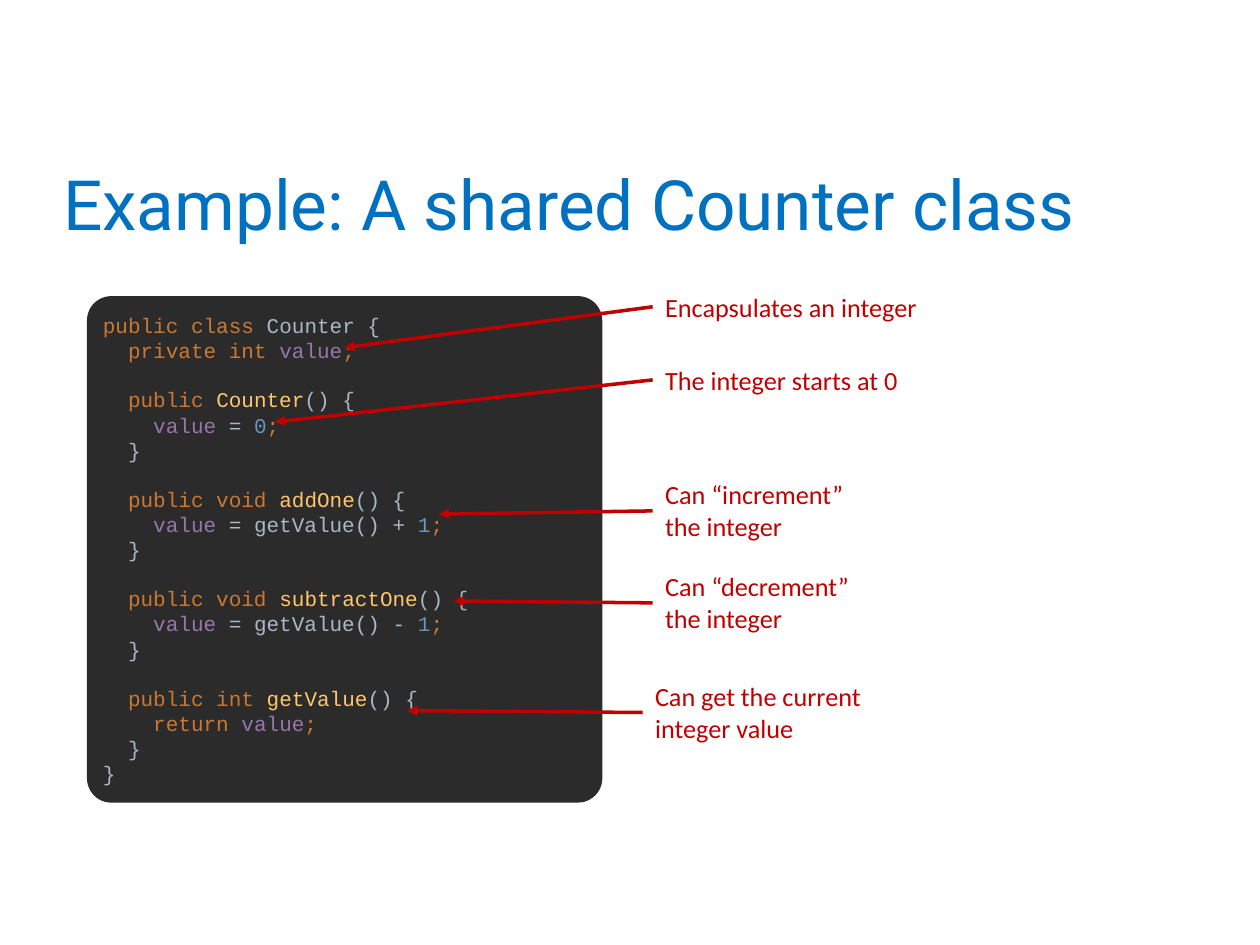
from dataclasses import dataclass

from lxml import etree
from pptx import Presentation
from pptx.dml.color import RGBColor
from pptx.enum.shapes import MSO_CONNECTOR, MSO_SHAPE
from pptx.enum.text import MSO_ANCHOR, PP_ALIGN
from pptx.oxml.ns import qn
from pptx.util import Inches, Pt

STRAIGHT = MSO_CONNECTOR.STRAIGHT
ROUNDED = MSO_SHAPE.ROUNDED_RECTANGLE
MIDDLE = MSO_ANCHOR.MIDDLE
TOP = MSO_ANCHOR.TOP
LEFT = PP_ALIGN.LEFT


@dataclass(frozen=True)
class Theme:
    title_font: str = "Roboto"
    code_font: str = "Courier New"
    note_font: str = "Calibri"
    title_size: float = 39.6
    code_size: float = 12
    note_size: float = 15
    blank_line: float = 13.6
    arrow_width: float = 2
    title: str = "0070C0"
    note: str = "C00000"
    panel: str = "2B2B2B"
    keyword: str = "CC7832"
    plain: str = "A9B7C6"
    field: str = "9876AA"
    method: str = "FFC66D"
    number: str = "6897BB"


def header(modifiers, name):
    return [("keyword", f"  {modifiers} "), ("method", name), ("plain", "() {")]


def assignment(expression, number):
    return [("field", "    value "), ("plain", f"= {expression}"),
            ("number", number), ("keyword", ";")]


METHOD_END = [("plain", "  }")]

CODE_BLOCKS = [
    [[("keyword", "public class "), ("plain", "Counter {")],
     [("keyword", "  private int "), ("field", "value"), ("keyword", ";")]],
    [header("public", "Counter"), assignment("", "0"), METHOD_END],
    [header("public void", "addOne"), assignment("getValue() + ", "1"), METHOD_END],
    [header("public void", "subtractOne"), assignment("getValue() - ", "1"), METHOD_END],
    [header("public int", "getValue"),
     [("keyword", "    return "), ("field", "value"), ("keyword", ";")],
     METHOD_END, [("plain", "}")]],
]

ONE_LINE, TWO_LINES = 0.35, 0.61
NOTES = [
    ("Encapsulates an integer", (5.18, 2.26, 2.55, ONE_LINE), (2.73, 2.76)),
    ("The integer starts at 0", (5.18, 2.84, 2.55, ONE_LINE), (2.18, 3.35)),
    ("Can “increment” the integer", (5.18, 3.75, 1.74, TWO_LINES), (3.48, 4.08)),
    ("Can “decrement” the integer", (5.18, 4.48, 1.74, TWO_LINES), (3.6, 4.77)),
    ("Can get the current integer value", (5.1, 5.35, 2.05, TWO_LINES), (3.23, 5.64)),
]


class SlideBuilder:
    def __init__(self, slide, theme):
        self.slide = slide
        self.theme = theme

    def style(self, font, name, size, color=None):
        font.name = name
        font.size = Pt(size)
        if color:
            font.color.rgb = RGBColor.from_string(color)

    def frame(self, shape, side, edge, anchor):
        frame = shape.text_frame
        frame.word_wrap = True
        frame.vertical_anchor = anchor
        frame.margin_left = frame.margin_right = Inches(side)
        frame.margin_top = frame.margin_bottom = Inches(edge)
        return frame

    def text(self, words, box, font, size, color, side=0.1, edge=0.05, anchor=TOP):
        label = self.slide.shapes.add_textbox(*map(Inches, box))
        paragraph = self.frame(label, side, edge, anchor).paragraphs[0]
        paragraph.text = words
        self.style(paragraph.font, font, size, color)
        return paragraph

    def title(self, words, box):
        theme = self.theme
        heading = self.text(words, box, theme.title_font, theme.title_size,
                            theme.title, 0.07, 0.04, MIDDLE)
        heading.line_spacing = 0.9

    def code(self, blocks, box):
        theme = self.theme
        panel = self.slide.shapes.add_shape(ROUNDED, *map(Inches, box))
        panel.adjustments[0] = 0.048
        panel.shadow.inherit = False
        panel.fill.solid()
        panel.fill.fore_color.rgb = RGBColor.from_string(theme.panel)
        panel.line.fill.background()
        frame = self.frame(panel, 0.07, 0.04, MIDDLE)
        paragraph = None
        for block in blocks:
            for row, tokens in enumerate(block):
                first = paragraph is None
                paragraph = frame.paragraphs[0] if first else frame.add_paragraph()
                paragraph.alignment = LEFT
                if row == 0 and not first:
                    paragraph.space_before = Pt(theme.blank_line)
                self.style(paragraph.font, theme.code_font, theme.code_size)
                for kind, words in tokens:
                    token = paragraph.add_run()
                    token.text = words
                    token.font.color.rgb = RGBColor.from_string(getattr(theme, kind))

    def arrow(self, start, end):
        arrow = self.slide.shapes.add_connector(STRAIGHT, *map(Inches, start + end))
        arrow.line.color.rgb = RGBColor.from_string(self.theme.note)
        arrow.line.width = Pt(self.theme.arrow_width)
        etree.SubElement(arrow.line._get_or_add_ln(), qn("a:tailEnd"), type="triangle")
        etree.SubElement(arrow._element.spPr, qn("a:effectLst"))

    def note(self, words, box, target):
        theme = self.theme
        left, top, _, height = box
        self.arrow((left, top + height / 2), target)
        self.text(words, box, theme.note_font, theme.note_size, theme.note)


def main():
    deck = Presentation()
    deck.slide_width, deck.slide_height = Inches(10), Inches(7.5)
    slide = deck.slides.add_slide(deck.slide_layouts[6])
    builder = SlideBuilder(slide, Theme())
    builder.title("Example: A shared Counter class", (0.43, 1.24, 8.89, 0.82))
    builder.code(CODE_BLOCKS, (0.69, 2.35, 4.09, 4.02))
    for words, box, target in NOTES:
        builder.note(words, box, target)
    deck.save("out.pptx")


if __name__ == "__main__":
    main()
